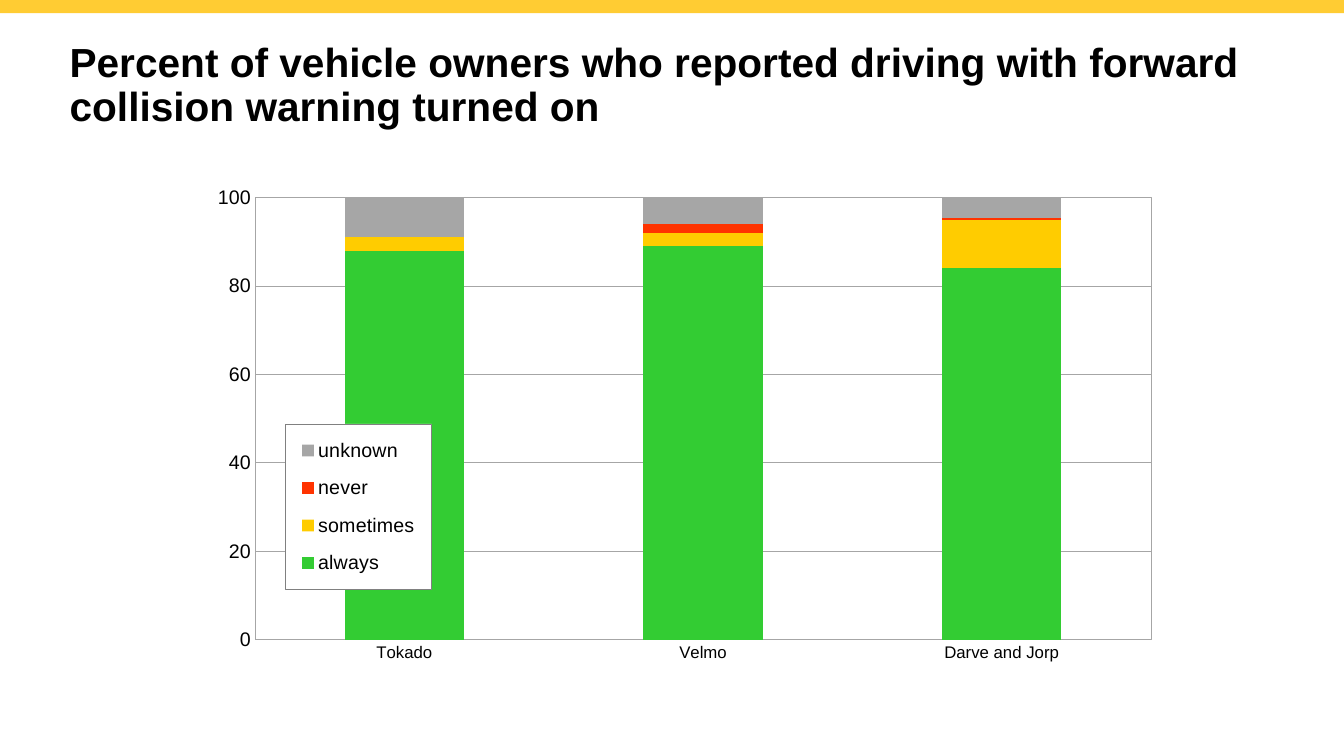
from lxml.etree import SubElement
from pptx import Presentation
from pptx.chart.data import CategoryChartData
from pptx.dml.color import RGBColor
from pptx.enum.chart import XL_CHART_TYPE as ChartType
from pptx.enum.chart import XL_LEGEND_POSITION as LegendPosition
from pptx.enum.chart import XL_TICK_MARK as TickMark
from pptx.enum.shapes import MSO_SHAPE as Shape
from pptx.enum.text import MSO_ANCHOR as Anchor
from pptx.enum.text import PP_ALIGN as Align
from pptx.oxml import parse_xml
from pptx.oxml.ns import nsdecls, qn
from pptx.util import Inches, Pt

FONT = "Arial"
GRAY = "A6A6A6"
MAKERS = ["Tokado", "Velmo", "Darve and Jorp"]
ANSWERS = [
    ("always", [88, 89, 84], "33CC33"),
    ("sometimes", [3, 3, 11], "FFCC00"),
    ("never", [0, 2, 0.5], "FF3300"),
    ("unknown", [9, 6, 4.5], GRAY),
]


def color(hex_code):
    return RGBColor.from_string(hex_code)


def set_font(font, size, bold=False):
    font.name = FONT
    font.size = Pt(size)
    font.bold = bold
    font.color.rgb = color("000000")


def set_line(line, hex_code, width):
    line.color.rgb = color(hex_code)
    line.width = Pt(width)


def add_top_band(slide, width):
    band = slide.shapes.add_shape(Shape.RECTANGLE, 0, 0, width, Inches(0.13))
    band.shadow.inherit = False
    band.fill.solid()
    band.fill.fore_color.rgb = color("FFCC33")
    band.line.fill.background()


def fill_title(slide, text):
    title = slide.shapes.title
    title.left, title.top = Inches(0.69), Inches(0.42)
    title.width, title.height = Inches(12.29), Inches(0.86)
    frame = title.text_frame
    frame.text = text
    frame.word_wrap = True
    frame.vertical_anchor = Anchor.TOP
    frame.margin_left = frame.margin_top = frame.margin_right = frame.margin_bottom = 0
    heading = frame.paragraphs[0]
    heading.alignment = Align.LEFT
    heading.line_spacing = Pt(31)
    set_font(heading.font, 29, bold=True)


def make_layout(x, y, w, h, inner=False):
    layout = parse_xml(f"<c:layout {nsdecls('c')}><c:manualLayout/></c:layout>")
    settings = [("xMode", "edge"), ("yMode", "edge"),
                ("x", x), ("y", y), ("w", w), ("h", h)]
    if inner:
        settings.insert(0, ("layoutTarget", "inner"))
    for tag, value in settings:
        SubElement(layout[0], qn(f"c:{tag}")).set("val", str(value))
    return layout


def make_frame(fill, line, width):
    return parse_xml(
        f"<c:spPr {nsdecls('c', 'a')}>{fill}<a:ln w='{Pt(width)}'>"
        f"<a:solidFill><a:srgbClr val='{line}'/></a:solidFill></a:ln></c:spPr>")


def drop_layout(parent):
    for layout in parent.findall(qn("c:layout")):
        parent.remove(layout)


def format_axis(axis, size):
    axis.major_tick_mark = axis.minor_tick_mark = TickMark.NONE
    set_font(axis.tick_labels.font, size)
    set_line(axis.format.line, GRAY, 0.25)


def place_plot(chart):
    plot_area = chart.element.find(f".//{qn('c:plotArea')}")
    drop_layout(plot_area)
    plot_area.insert(0, make_layout(0.061, 0.054, 0.919, 0.76, inner=True))
    plot_area.append(make_frame("<a:noFill/>", GRAY, 0.5))


def add_legend(chart):
    chart.has_legend = True
    chart.legend.position = LegendPosition.LEFT
    chart.legend.include_in_layout = False
    chart.legend.overlay = True
    set_font(chart.legend.font, 14)
    legend = chart.element.find(f".//{qn('c:legend')}")
    drop_layout(legend)
    legend.find(qn("c:legendPos")).addnext(make_layout(0.092, 0.443, 0.15, 0.285))
    white = "<a:solidFill><a:srgbClr val='FFFFFF'/></a:solidFill>"
    legend.find(qn("c:txPr")).addprevious(make_frame(white, "808080", 0.5))
    legend.find(qn("c:overlay")).set("val", "1")


def add_usage_chart(slide):
    usage = CategoryChartData()
    usage.categories = MAKERS
    for name, percents, _ in ANSWERS:
        usage.add_series(name, percents)
    chart = slide.shapes.add_chart(
        ChartType.COLUMN_STACKED, Inches(1.94), Inches(1.65),
        Inches(9.67), Inches(5.77), usage).chart
    chart.has_title = False
    set_font(chart.font, 14)

    # Columns
    columns = chart.plots[0]
    columns.gap_width, columns.overlap = 150, 100
    columns.vary_by_categories = False
    for series, (_, _, hex_code) in zip(columns.series, ANSWERS):
        series.format.fill.solid()
        series.format.fill.fore_color.rgb = color(hex_code)

    # Axes
    format_axis(chart.category_axis, 12)
    percent_axis = chart.value_axis
    format_axis(percent_axis, 14)
    percent_axis.minimum_scale, percent_axis.maximum_scale = 0, 100
    percent_axis.major_unit = 20
    percent_axis.has_major_gridlines = True
    set_line(percent_axis.major_gridlines.format.line, GRAY, 0.5)

    place_plot(chart)
    add_legend(chart)


def main():
    deck = Presentation()
    deck.slide_width, deck.slide_height = Inches(13.33), Inches(7.5)
    slide = deck.slides.add_slide(deck.slide_layouts[5])
    add_top_band(slide, deck.slide_width)
    fill_title(slide, "Percent of vehicle owners who reported driving "
                      "with forward collision warning turned on")
    add_usage_chart(slide)
    deck.save("out.pptx")


if __name__ == "__main__":
    main()
